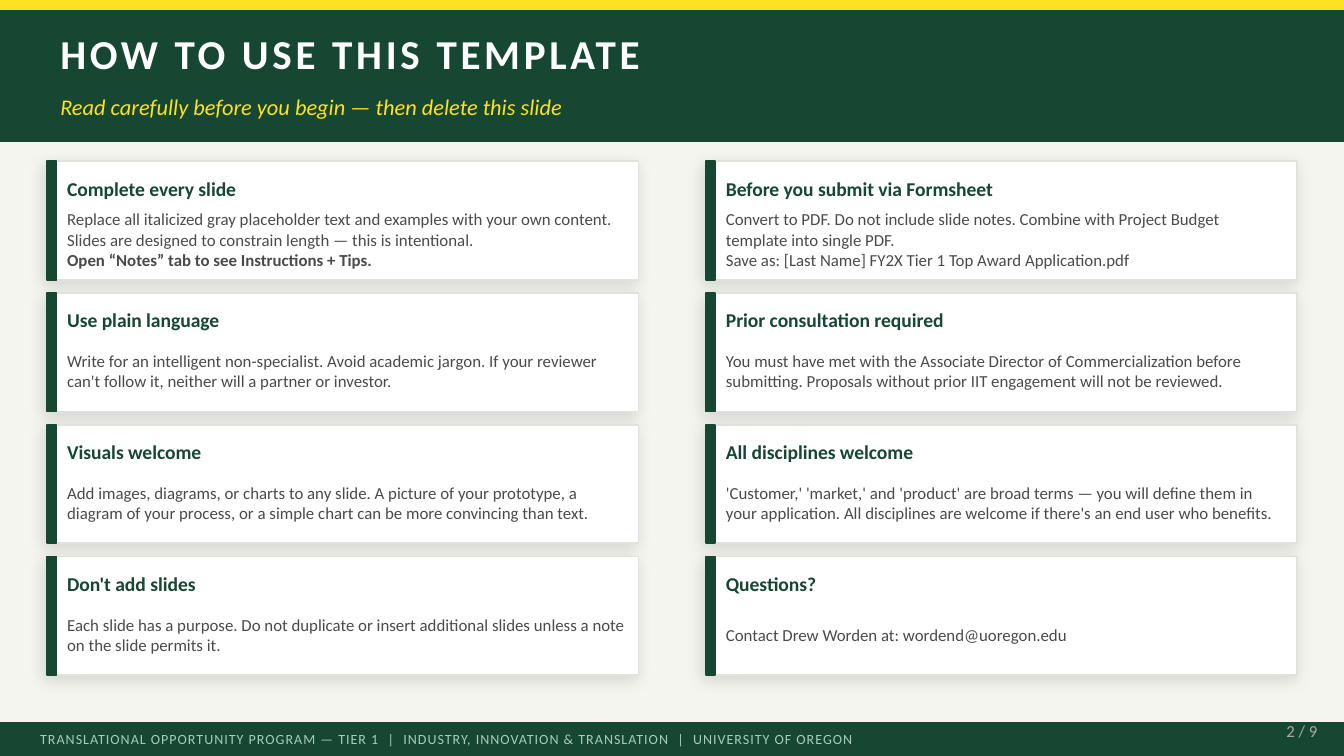
from lxml.etree import SubElement
from pptx import Presentation
from pptx.dml.color import RGBColor
from pptx.enum.shapes import MSO_SHAPE as Preset
from pptx.enum.text import MSO_ANCHOR as Anchor, MSO_AUTO_SIZE as AutoSize, PP_ALIGN as Align
from pptx.oxml.ns import qn
from pptx.util import Cm, Pt

TITLE = "HOW TO USE THIS TEMPLATE"
SUBTITLE = "Read carefully before you begin — then delete this slide"
FOOTER = (
    "TRANSLATIONAL OPPORTUNITY PROGRAM — TIER 1  |  "
    "INDUSTRY, INNOVATION & TRANSLATION  |  UNIVERSITY OF OREGON"
)
PAGE = "2 / 9"

COLUMNS = [
    [
        ("Complete every slide", [
            "Replace all italicized gray placeholder text and examples with your own content. "
            "Slides are designed to constrain length — this is intentional.",
            "Open “Notes” tab to see Instructions + Tips.",
        ]),
        ("Use plain language", [
            "Write for an intelligent non-specialist. Avoid academic jargon. If your reviewer "
            "can't follow it, neither will a partner or investor.",
        ]),
        ("Visuals welcome", [
            "Add images, diagrams, or charts to any slide. A picture of your prototype, a "
            "diagram of your process, or a simple chart can be more convincing than text.",
        ]),
        ("Don't add slides", [
            "Each slide has a purpose. Do not duplicate or insert additional slides unless a note "
            "on the slide permits it.",
        ]),
    ],
    [
        ("Before you submit via Formsheet", [
            "Convert to PDF. Do not include slide notes. Combine with Project Budget "
            "template into single PDF.",
            "Save as: [Last Name] FY2X Tier 1 Top Award Application.pdf",
        ]),
        ("Prior consultation required", [
            "You must have met with the Associate Director of Commercialization before "
            "submitting. Proposals without prior IIT engagement will not be reviewed.",
        ]),
        ("All disciplines welcome", [
            "'Customer,' 'market,' and 'product' are broad terms — you will define them in "
            "your application. All disciplines are welcome if there's an end user who benefits.",
        ]),
        ("Questions?", ["Contact Drew Worden at: wordend@uoregon.edu"]),
    ],
]
BOLD_LINES = {"Open “Notes” tab to see Instructions + Tips."}

THEME = {
    "font": "Calibri",
    "color": {
        "background": "F5F5F0", "green": "154733", "yellow": "FEE123", "card": "FFFFFF",
        "border": "E2E2DC", "title": "FFFFFF", "body": "4A4A4A", "footer": "AACCBB",
        "page": "AAAAAA",
    },
    "size": {"title": 22, "subtitle": 12, "heading": 10.5, "body": 9, "footer": 7.5, "page": 9},
}
COLOR, SIZE = THEME["color"], THEME["size"]

WIDTH, HEIGHT = 25.4, 14.29
CARD_LEFT, CARD_TOP = 0.89, 3.05
CARD_WIDTH, CARD_HEIGHT = 11.18, 2.24
COLUMN_STEP, ROW_STEP = 12.45, 2.49
ACCENT_WIDTH, TEXT_INSET = 0.18, 0.38
FOOTER_TOP, FOOTER_HEIGHT = 13.67, 0.61

presentation = Presentation()
presentation.slide_width, presentation.slide_height = Cm(WIDTH), Cm(HEIGHT)
slide = presentation.slides.add_slide(presentation.slide_layouts[5])
slide.background.fill.solid()
slide.background.fill.fore_color.rgb = RGBColor.from_string(COLOR["background"])


def add_panel(left, top, width, height, fill, line=None, shadow=False):
    shape = slide.shapes.add_shape(Preset.RECTANGLE, Cm(left), Cm(top), Cm(width), Cm(height))
    shape.fill.solid()
    shape.fill.fore_color.rgb = RGBColor.from_string(COLOR[fill])
    shape.line.color.rgb = RGBColor.from_string(COLOR[line or fill])
    shape.line.width = Pt(1)
    shape.shadow.inherit = False
    if shadow:
        effects = shape._element.spPr.find(qn("a:effectLst"))
        outer = SubElement(effects, qn("a:outerShdw"), blurRad=str(Pt(8)), dist=str(Pt(3)),
                           dir=str(135 * 60000), algn="bl", rotWithShape="0")
        black = SubElement(outer, qn("a:srgbClr"), val="000000")
        SubElement(black, qn("a:alpha"), val="12000")


def add_text(lines, left, top, width, height, role, color=None, bold=False, italic=False,
             spacing=0, align=Align.LEFT, shape=None):
    box = (Cm(left), Cm(top), Cm(width), Cm(height))
    if shape is None:
        shape = slide.shapes.add_textbox(*box)
    else:
        shape.left, shape.top, shape.width, shape.height = box
    frame = shape.text_frame
    frame.word_wrap = True
    frame.auto_size = AutoSize.NONE
    frame.vertical_anchor = Anchor.MIDDLE
    frame.margin_left = frame.margin_top = frame.margin_right = frame.margin_bottom = 0
    for index, line in enumerate(lines):
        paragraph = frame.add_paragraph() if index else frame.paragraphs[0]
        paragraph.alignment = align
        run = paragraph.add_run()
        run.text = line
        font = run.font
        font.name, font.size = THEME["font"], Pt(SIZE[role])
        font.bold, font.italic = bold or line in BOLD_LINES, italic
        font.color.rgb = RGBColor.from_string(COLOR[color or role])
        if spacing:
            run._r.get_or_add_rPr().set("spc", str(int(spacing * 100)))


def add_card(left, top, heading, lines):
    add_panel(left, top, CARD_WIDTH, CARD_HEIGHT, "card", line="border", shadow=True)
    add_panel(left, top, ACCENT_WIDTH, CARD_HEIGHT, "green")
    text_left = left + TEXT_INSET
    add_text([heading], text_left, top + 0.18, 10.41, 0.66, "heading", color="green", bold=True)
    add_text(lines, text_left, top + 0.84, 10.54, 1.27, "body")


add_panel(0, 0, WIDTH, 2.67, "green")
add_panel(0, 0, WIDTH, 0.18, "yellow")
title = slide.shapes.title
slide.shapes._spTree.append(title._element)
add_text([TITLE], 1.14, 0.3, 21.59, 1.4, "title", bold=True, spacing=2, shape=title)
add_text([SUBTITLE], 1.14, 1.57, 21.59, 0.89, "subtitle", color="yellow", italic=True)

add_panel(0, FOOTER_TOP, WIDTH, FOOTER_HEIGHT, "green")
add_text([FOOTER], 0.76, FOOTER_TOP, 22.86, FOOTER_HEIGHT, "footer", spacing=0.5)
add_text([PAGE], 22.61, 13.54, 2.29, 0.56, "page", align=Align.RIGHT)

for column, cards in enumerate(COLUMNS):
    for row, (heading, lines) in enumerate(cards):
        add_card(CARD_LEFT + column * COLUMN_STEP, CARD_TOP + row * ROW_STEP, heading, lines)

presentation.save("out.pptx")
